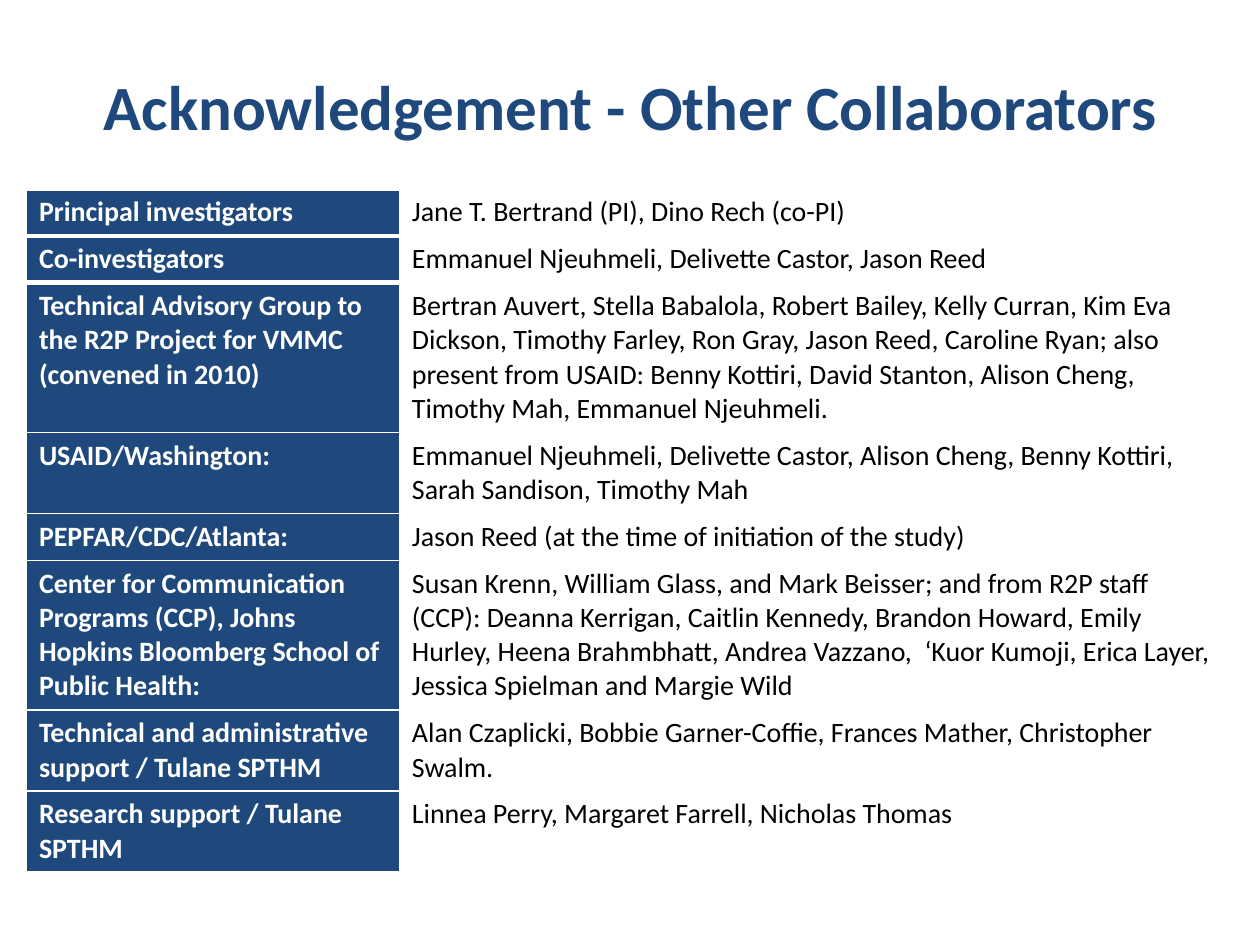
import pptx
import pptx.dml.color
import pptx.enum.text
import pptx.oxml.ns
import pptx.util
from lxml import etree

Inches = pptx.util.Inches
Pt = pptx.util.Pt

HUES = {"navy": "1F497D", "white": "FFFFFF", "black": "000000"}

# Font values for each kind of text
FONTS = {
    "title": {"name": "Calibri", "size": Pt(36), "bold": True},
    "role": {"name": "Calibri", "size": Pt(16), "bold": True},
    "names": {"name": "Calibri", "size": Pt(16), "bold": False},
}

COLS = [2.96, 6.62]

# Row height, role, people
ROWS = [
    (0.37, "Principal investigators", "Jane T. Bertrand (PI), Dino Rech (co-PI)"),
    (0.37, "Co-investigators", "Emmanuel Njeuhmeli, Delivette Castor, Jason Reed"),
    (1.12, "Technical Advisory Group to the R2P Project for VMMC (convened in 2010)",
     "Bertran Auvert, Stella Babalola, Robert Bailey, Kelly Curran, Kim Eva Dickson, "
     "Timothy Farley, Ron Gray, Jason Reed, Caroline Ryan; also present from USAID: "
     "Benny Kottiri, David Stanton, Alison Cheng, Timothy Mah, Emmanuel Njeuhmeli."),
    (0.61, "USAID/Washington:",
     "Emmanuel Njeuhmeli, Delivette Castor, Alison Cheng, Benny Kottiri, "
     "Sarah Sandison, Timothy Mah"),
    (0.35, "PEPFAR/CDC/Atlanta:", "Jason Reed (at the time of initiation of the study)"),
    (1.12, "Center for Communication Programs (CCP), Johns Hopkins Bloomberg School "
     "of Public Health:",
     "Susan Krenn, William Glass, and Mark Beisser; and from R2P staff (CCP): "
     "Deanna Kerrigan, Caitlin Kennedy, Brandon Howard, Emily Hurley, "
     "Heena Brahmbhatt, Andrea Vazzano,  ‘Kuor Kumoji, Erica Layer, "
     "Jessica Spielman and Margie Wild"),
    (0.62, "Technical and administrative support / Tulane SPTHM",
     "Alan Czaplicki, Bobbie Garner-Coffie, Frances Mather, Christopher Swalm."),
    (0.61, "Research support / Tulane SPTHM",
     "Linnea Perry, Margaret Farrell, Nicholas Thomas"),
]
THICK = 2  # the rows above this index have a heavy rule below


def tint(hue):
    return pptx.dml.color.RGBColor.from_string(HUES[hue])


def style(item, values):
    for key, value in values.items():
        setattr(item, key, value)


def write(frame, text, kind, hue):
    para = frame.paragraphs[0]
    run = para.add_run()
    run.text = text
    style(run.font, FONTS[kind])
    run.font.color.rgb = tint(hue)
    return para


def edge(cell, side, width):
    tag = pptx.oxml.ns.qn
    line = etree.SubElement(cell._tc.get_or_add_tcPr(), tag("a:ln" + side), w=str(Pt(width)))
    fill = etree.SubElement(line, tag("a:solidFill"))
    etree.SubElement(fill, tag("a:srgbClr"), val=HUES["white"])


def add_title(slide, text):
    title = slide.shapes.title
    style(title, {"left": Inches(0.17), "top": Inches(0.5),
                  "width": Inches(9.67), "height": Inches(0.67)})
    style(title.text_frame, {"word_wrap": True,
                             "auto_size": pptx.enum.text.MSO_AUTO_SIZE.NONE,
                             "vertical_anchor": pptx.enum.text.MSO_ANCHOR.MIDDLE})
    para = write(title.text_frame, text, "title", "navy")
    para.alignment = pptx.enum.text.PP_ALIGN.CENTER


def fill_cell(cell, row, text, kind, hue):
    style(cell, {"margin_left": Inches(0.1), "margin_right": Inches(0.1),
                 "margin_top": Inches(0.05), "margin_bottom": Inches(0.05)})
    # Borders come before the fill in the cell's XML
    top = 3 if row <= THICK else 1
    base = 3 if row < THICK else 1
    for side, width in {"L": 1, "R": 1, "T": top, "B": base}.items():
        edge(cell, side, width)
    if kind == "role":
        cell.fill.solid()
        cell.fill.fore_color.rgb = tint("navy")
    else:
        cell.fill.background()
    write(cell.text_frame, text, kind, hue)


def add_people(slide):
    high = sum(row[0] for row in ROWS)
    frame = slide.shapes.add_table(len(ROWS), len(COLS), Inches(0.21), Inches(1.5),
                                   Inches(sum(COLS)), Inches(high))
    table = frame.table
    style(table, {"first_row": False, "horz_banding": False})
    for col, width in zip(table.columns, COLS):
        col.width = Inches(width)
    for index, (height, role, names) in enumerate(ROWS):
        table.rows[index].height = Inches(height)
        fill_cell(table.cell(index, 0), index, role, "role", "white")
        fill_cell(table.cell(index, 1), index, names, "names", "black")


def main():
    deck = pptx.Presentation()
    style(deck, {"slide_width": Inches(10), "slide_height": Inches(7.5)})
    slide = deck.slides.add_slide(deck.slide_layouts[5])
    add_title(slide, "Acknowledgement - Other Collaborators")
    add_people(slide)
    deck.save("out.pptx")


if __name__ == "__main__":
    main()
